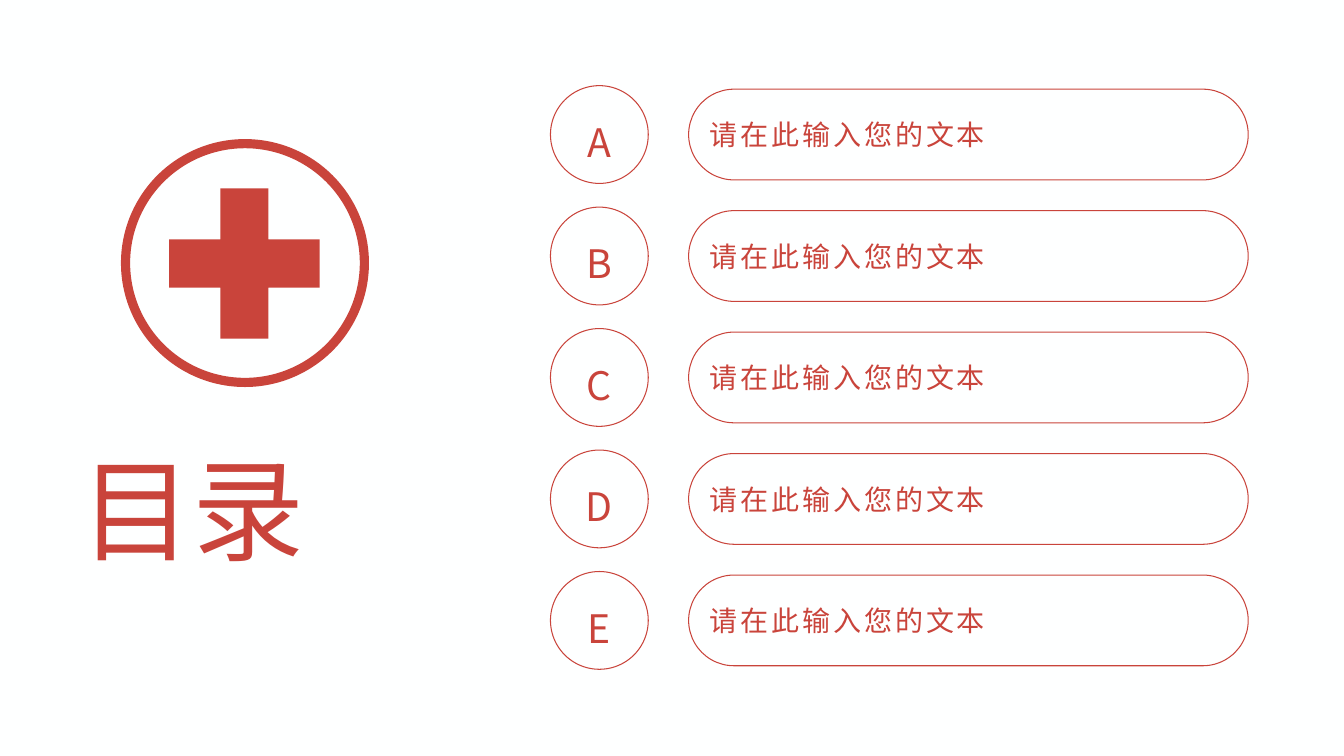
from dataclasses import dataclass

from lxml.etree import SubElement
from pptx import Presentation
from pptx.dml.color import RGBColor
from pptx.enum.shapes import MSO_SHAPE
from pptx.enum.text import MSO_ANCHOR, MSO_AUTO_SIZE, PP_ALIGN
from pptx.oxml.ns import qn
from pptx.shapes.autoshape import Shape
from pptx.slide import Slide
from pptx.util import Inches, Pt

RED = RGBColor(0xC9, 0x44, 0x3B)
BACKGROUND = RGBColor(0xFE, 0xFF, 0xFF)
FONT = "Noto Sans CJK SC"

FIRST_TOP, LAST_TOP = 0.85, 5.67
CIRCLE_LEFT, CIRCLE_SIZE = 5.46, 0.97
PILL_LEFT, PILL_WIDTH, PILL_HEIGHT = 6.83, 5.55, 0.9


@dataclass(frozen=True)
class Entry:
    letter: str
    text: str


ENTRIES = [Entry(letter, "请在此输入您的文本") for letter in "ABCDE"]


def add_text(
    shape: Shape,
    text: str,
    size: float,
    alignment: PP_ALIGN,
    line_spacing: float = 1.0,
    letter_spacing: float = 0,
) -> None:
    paragraph = shape.text_frame.paragraphs[0]
    paragraph.alignment = alignment
    paragraph.line_spacing = line_spacing
    run = paragraph.add_run()
    run.text = text
    run.font.size = Pt(size)
    run.font.name = FONT
    run.font.color.rgb = RED
    properties = run.font._element
    SubElement(properties, qn("a:ea")).set("typeface", FONT)
    if letter_spacing:
        properties.set("spc", str(round(letter_spacing * 100)))


def add_outline(
    slide: Slide, preset: MSO_SHAPE, left: float, top: float,
    width: float, height: float, left_inset: float = 0,
) -> Shape:
    """Add an unfilled shape with a thin red line, ready for text."""
    shape = slide.shapes.add_shape(
        preset, Inches(left), Inches(top), Inches(width), Inches(height)
    )
    shape.shadow.inherit = False
    shape.fill.background()
    shape.line.color.rgb = RED
    shape.line.width = Pt(0.75)
    frame = shape.text_frame
    frame.word_wrap = True
    frame.vertical_anchor = MSO_ANCHOR.MIDDLE
    frame.margin_left = Inches(left_inset)
    frame.margin_top = frame.margin_right = frame.margin_bottom = 0
    return shape


def add_entry(slide: Slide, entry: Entry, top: float) -> None:
    pill_top = top + (CIRCLE_SIZE - PILL_HEIGHT) / 2
    pill = add_outline(
        slide, MSO_SHAPE.ROUNDED_RECTANGLE, PILL_LEFT, pill_top,
        PILL_WIDTH, PILL_HEIGHT, left_inset=0.08,
    )
    pill.adjustments[0] = 0.5
    add_text(pill, entry.text, 20, PP_ALIGN.LEFT, letter_spacing=2)
    circle = add_outline(
        slide, MSO_SHAPE.OVAL, CIRCLE_LEFT, top, CIRCLE_SIZE, CIRCLE_SIZE
    )
    add_text(circle, entry.letter, 28, PP_ALIGN.CENTER, line_spacing=1.3)


def add_title(slide: Slide) -> None:
    title = slide.shapes.add_textbox(
        Inches(0.7), Inches(4.32), Inches(3.46), Inches(1.45)
    )
    title.text_frame.word_wrap = True
    title.text_frame.auto_size = MSO_AUTO_SIZE.SHAPE_TO_FIT_TEXT
    add_text(title, "目录", 80, PP_ALIGN.JUSTIFY)


def add_medical_cross(slide: Slide) -> None:
    group = slide.shapes.add_group_shape()
    plus = group.shapes.add_shape(
        MSO_SHAPE.MATH_PLUS, Inches(1.41), Inches(1.6), Inches(2.03), Inches(2.03)
    )
    ring = group.shapes.add_shape(
        MSO_SHAPE.DONUT, Inches(1.2), Inches(1.38), Inches(2.46), Inches(2.46)
    )
    ring.adjustments[0] = 0.037
    for shape in (plus, ring):
        shape.shadow.inherit = False
        shape.fill.solid()
        shape.fill.fore_color.rgb = RED
        shape.line.fill.background()


def main() -> None:
    presentation = Presentation()
    presentation.slide_width = Inches(13.33)
    presentation.slide_height = Inches(7.5)
    slide = presentation.slides.add_slide(presentation.slide_layouts[6])
    slide.background.fill.solid()
    slide.background.fill.fore_color.rgb = BACKGROUND

    pitch = (LAST_TOP - FIRST_TOP) / (len(ENTRIES) - 1)
    for index, entry in enumerate(ENTRIES):
        add_entry(slide, entry, FIRST_TOP + index * pitch)
    add_title(slide)
    add_medical_cross(slide)
    presentation.save("out.pptx")


if __name__ == "__main__":
    main()
